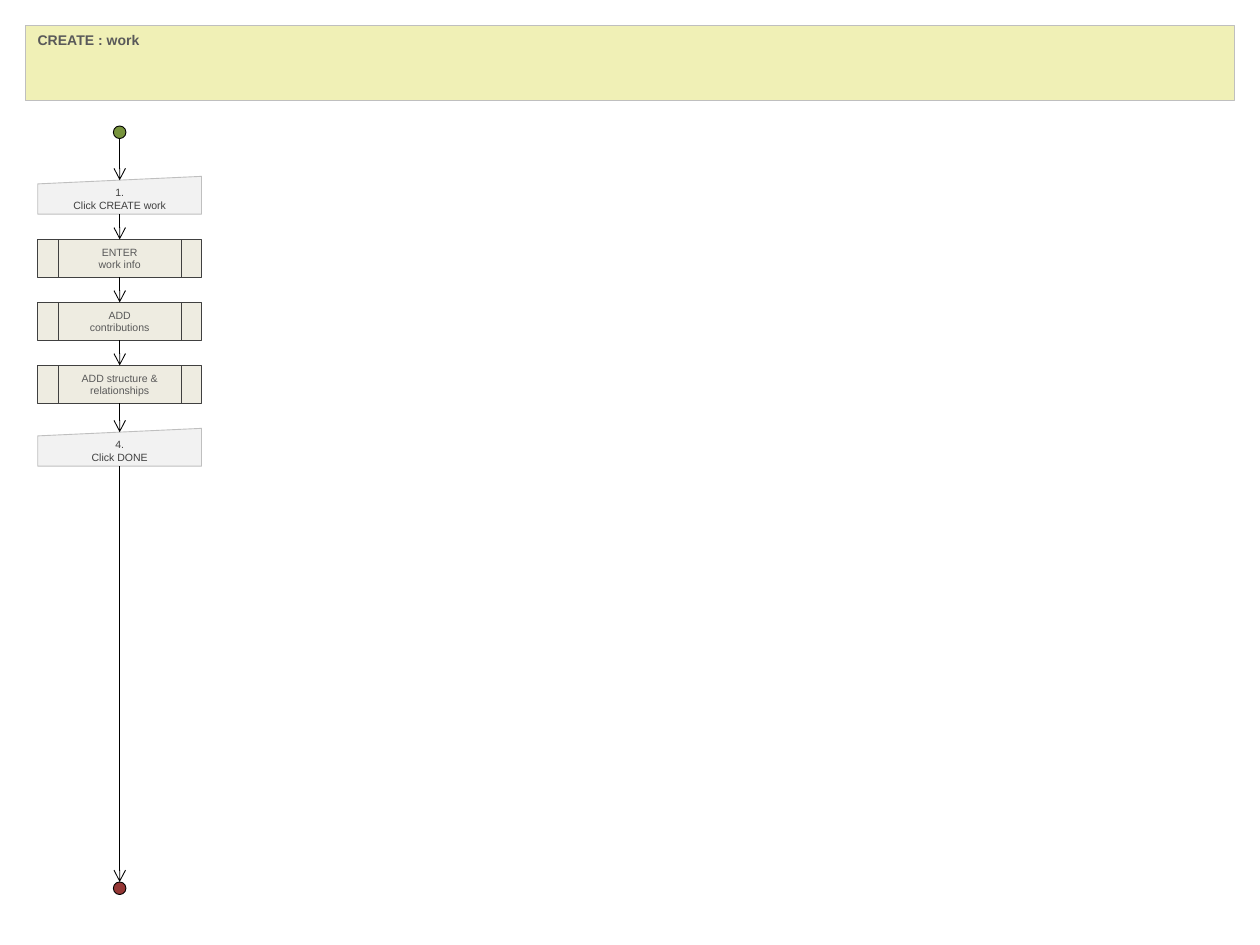
from copy import deepcopy
from dataclasses import dataclass

from lxml.etree import SubElement
from pptx import Presentation
from pptx.dml.color import RGBColor
from pptx.enum.shapes import MSO_CONNECTOR, MSO_SHAPE
from pptx.enum.text import MSO_ANCHOR, PP_ALIGN
from pptx.oxml.ns import qn
from pptx.util import Emu, Pt

PX = 9144


@dataclass(frozen=True)
class Theme:
    font: str = "Arial"
    title_size: int = 8
    step_size: int = 6
    line_width: float = 0.5
    black: str = "000000"
    start: str = "77933C"
    end: str = "953735"
    banner: str = "F0F0B6"
    process: str = "EEECE1"
    action: str = "F2F2F2"
    soft_line: str = "BFBFBF"
    dark: str = "404040"
    grey: str = "595959"


class FlowSlide:
    def __init__(self, prs, theme):
        self.s = prs.slides.add_slide(prs.slide_layouts[6])
        self.theme = theme

    def style_line(self, line, color):
        line.color.rgb = RGBColor.from_string(color)
        line.width = Pt(self.theme.line_width)

    def shape(self, kind, x, y, w, h, fill, line):
        sp = self.s.shapes.add_shape(kind, *(Emu(v * PX) for v in (x, y, w, h)))
        sp.shadow.inherit = False
        sp.fill.solid()
        sp.fill.fore_color.rgb = RGBColor.from_string(fill)
        self.style_line(sp.line, line)
        return sp

    def text(self, sp, text, size, color, align, anchor, bold=False):
        tf = sp.text_frame
        tf.word_wrap = True
        tf.vertical_anchor = anchor
        p = tf.paragraphs[0]
        p.text = text
        p.alignment = align
        for r in p.runs:
            r.font.name = self.theme.font
            r.font.size = Pt(size)
            r.font.bold = bold
            r.font.color.rgb = RGBColor.from_string(color)
        for br in p._p.findall(qn("a:br")):
            br.append(deepcopy(p.runs[0]._r.rPr))

    def banner(self, text, x, y, w, h):
        t = self.theme
        sp = self.shape(MSO_SHAPE.RECTANGLE, x, y, w, h, t.banner, t.soft_line)
        self.text(sp, text, t.title_size, t.grey, PP_ALIGN.LEFT, MSO_ANCHOR.TOP, True)

    def dot(self, cx, y, size, fill):
        self.shape(MSO_SHAPE.OVAL, cx - size // 2, y, size, size, fill, self.theme.black)

    def step(self, kind, text, x, y, w, h, fill, line, color):
        sp = self.shape(kind, x, y, w, h, fill, line)
        self.text(sp, text, self.theme.step_size, color, PP_ALIGN.CENTER, MSO_ANCHOR.MIDDLE)

    def action(self, text, *box):
        t = self.theme
        self.step(MSO_SHAPE.FLOWCHART_MANUAL_INPUT, text, *box, t.action, t.soft_line, t.dark)

    def process(self, text, *box):
        t = self.theme
        self.step(MSO_SHAPE.FLOWCHART_PREDEFINED_PROCESS, text, *box, t.process, t.dark, t.grey)

    def arrow(self, x, top, bottom):
        c = self.s.shapes.add_connector(
            MSO_CONNECTOR.STRAIGHT, *(Emu(v * PX) for v in (x, top, x, bottom)))
        self.style_line(c.line, self.theme.black)
        sp_pr = c._element.spPr
        SubElement(sp_pr.find(qn("a:ln")), qn("a:tailEnd"), type="arrow")
        SubElement(sp_pr, qn("a:effectLst"))


def main():
    prs = Presentation()
    prs.slide_width, prs.slide_height = Emu(1000 * PX), Emu(750 * PX)
    theme = Theme()
    flow = FlowSlide(prs, theme)
    flow.banner("CREATE : work", 20, 20, 960, 60)

    left, width, height = 30, 130, 30
    first, pitch, slant = 140, 50, 3
    center = left + width // 2
    dot, start, end = 10, 100, 700
    steps = [
        (flow.action, "1.\nClick CREATE work"),
        (flow.process, "ENTER\nwork info"),
        (flow.process, "ADD\ncontributions"),
        (flow.process, "ADD structure & relationships"),
        (flow.action, "4.\nClick DONE"),
    ]

    flow.dot(center, start, dot, theme.start)
    flow.dot(center, end, dot, theme.end)
    previous = start + dot
    for i, (draw, text) in enumerate(steps):
        top = first + i * pitch
        draw(text, left, top, width, height)
        flow.arrow(center, previous, top + (slant if draw == flow.action else 0))
        previous = top + height
    flow.arrow(center, previous, end)

    prs.save("out.pptx")


if __name__ == "__main__":
    main()
